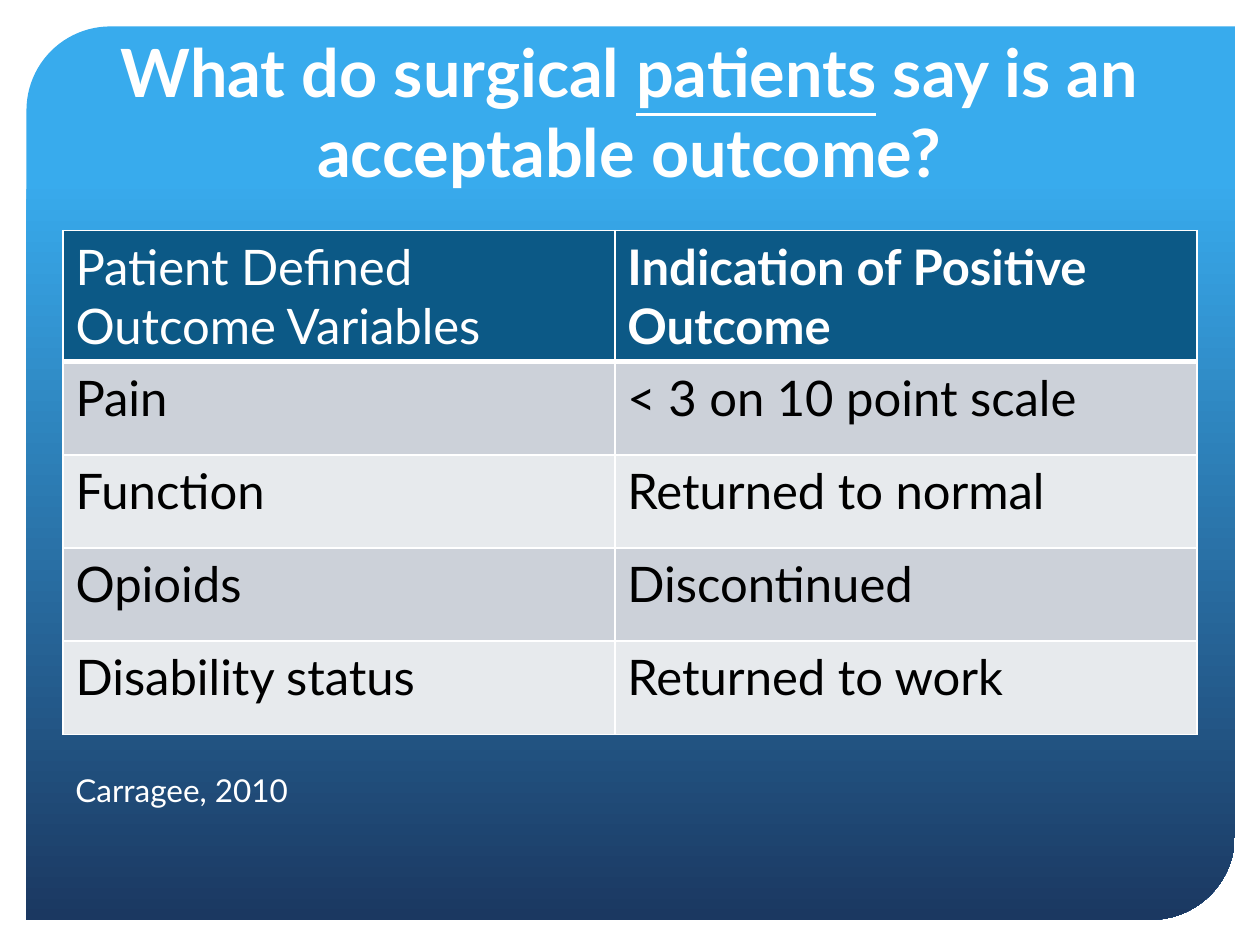
from dataclasses import dataclass

from lxml import etree
from pptx import Presentation, util as u
from pptx.dml.color import RGBColor
from pptx.enum import shapes, text
from pptx.oxml.ns import qn


@dataclass(frozen=True)
class Theme:
    font: str = "Lato"
    white: str = "FFFFFF"
    black: str = "000000"
    sky: str = "38ABED"
    navy: str = "1B3861"
    head: str = "0C5986"
    bands: tuple = ("CCD1D9", "E7EAED")
    title: int = 38
    body: int = 28
    note: int = 18
    thin: int = 1
    thick: int = 3


THEME = Theme()
WIDE, HIGH = u.Inches(10), u.Inches(7.5)
ROWS = [
    ("Patient Defined Outcome Variables", "Indication of Positive Outcome"),
    ("Pain", "< 3 on 10 point scale"),
    ("Function", "Returned to normal"),
    ("Opioids", "Discontinued"),
    ("Disability status", "Returned to work"),
]


def rgb(code):
    return RGBColor.from_string(code)


def place(left, top, wide, high):
    return [u.Inches(n) for n in (left, top, wide, high)]


def write(frame, *runs, size, color=THEME.white, bold=False, under=None,
          align=text.PP_ALIGN.LEFT):
    frame.word_wrap = True
    para = frame.paragraphs[0]
    para.alignment = align
    for words in runs:
        run = para.add_run()
        run.text = words
        font = run.font
        font.name, font.size, font.bold = THEME.font, u.Pt(size), bold
        font.color.rgb = rgb(color)
        font.underline = words == under


def panel(slide):
    box = slide.shapes.add_shape(
        shapes.MSO_SHAPE.ROUND_2_DIAG_RECTANGLE, *place(0.21, 0.21, 9.59, 7.09))
    box.adjustments[0], box.adjustments[1] = 0.094, 0
    box.shadow.inherit = False
    box.line.fill.background()
    box.fill.gradient()
    box.fill.gradient_angle = 270
    stops = ((0.17, THEME.sky), (1, THEME.navy))
    for stop, (spot, color) in zip(box.fill.gradient_stops, stops):
        stop.position, stop.color.rgb = spot, rgb(color)


def label(slide, area, *runs, anchor=text.MSO_ANCHOR.TOP, **style):
    frame = slide.shapes.add_textbox(*place(*area)).text_frame
    frame.vertical_anchor = anchor
    write(frame, *runs, **style)


def border(cell, widths):
    props = cell._tc.get_or_add_tcPr()
    for spot, (side, width) in enumerate(widths.items()):
        line = etree.Element(qn(f"a:ln{side}"), w=str(u.Pt(width)))
        fill = etree.SubElement(line, qn("a:solidFill"))
        etree.SubElement(fill, qn("a:srgbClr"), val=THEME.white)
        props.insert(spot, line)


def grid(slide, rows, left, top, cols, heights):
    table = slide.shapes.add_table(
        len(rows), len(cols),
        *place(left, top, sum(cols), sum(heights))).table
    for col, wide in zip(table.columns, cols):
        col.width = u.Inches(wide)
    for row, high in zip(table.rows, heights):
        row.height = u.Inches(high)
    for r, row in enumerate(rows):
        head = r == 0
        for c, words in enumerate(row):
            cell = table.cell(r, c)
            cell.fill.solid()
            cell.fill.fore_color.rgb = rgb(
                THEME.head if head else THEME.bands[(r - 1) % 2])
            write(cell.text_frame, words, size=THEME.body,
                  color=THEME.white if head else THEME.black,
                  bold=head and c == 1)
            border(cell, {
                "L": THEME.thin, "R": THEME.thin,
                "T": THEME.thick if r == 1 else THEME.thin,
                "B": THEME.thick if head else THEME.thin})


def main():
    deck = Presentation()
    deck.slide_width, deck.slide_height = WIDE, HIGH
    slide = deck.slides.add_slide(deck.slide_layouts[6])
    panel(slide)
    label(slide, (0.85, 0.42, 8.29, 1.14),
          "What do surgical ", "patients", " say is an acceptable outcome?",
          size=THEME.title, bold=True, under="patients",
          align=text.PP_ALIGN.CENTER, anchor=text.MSO_ANCHOR.BOTTOM)
    grid(slide, ROWS, 0.5, 1.83, (4.38, 4.62), [1.04] + [0.74] * 4)
    label(slide, (0.5, 6.07, 2.46, 0.4), "Carragee, 2010", size=THEME.note)
    deck.save("out.pptx")


if __name__ == "__main__":
    main()
